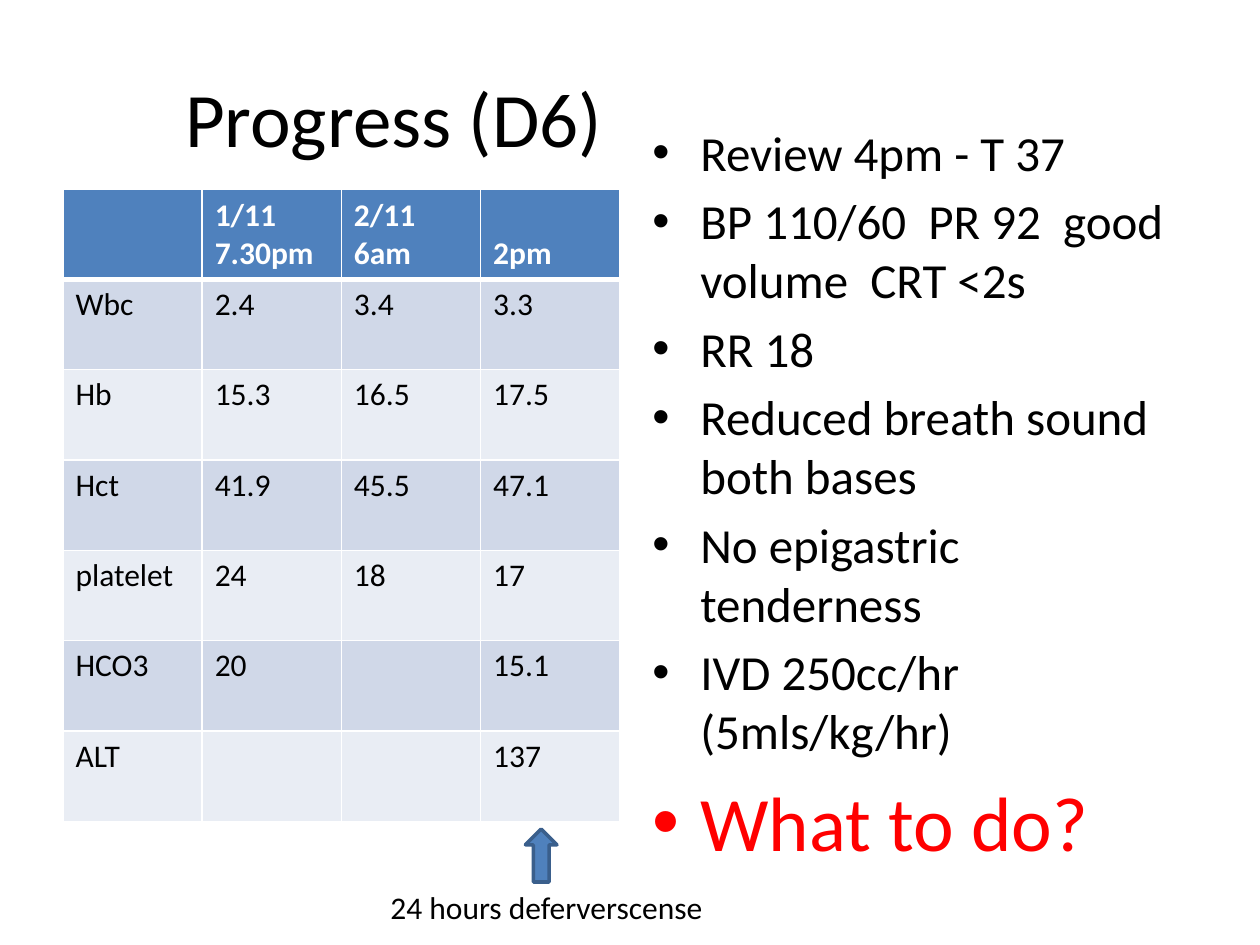
"""Build the day-six progress slide with a blood result table and review notes."""
from lxml.etree import SubElement
from pptx import Presentation
from pptx.dml.color import RGBColor
from pptx.enum.shapes import MSO_SHAPE as Shape
from pptx.enum.text import MSO_ANCHOR as Anchor, PP_ALIGN as Align
from pptx.oxml.ns import qn
from pptx.util import Inches, Pt

COLORS = {
    "text": "000000", "white": "FFFFFF", "alert": "FF0000",
    "blue": "4F81BD", "outline": "3A5F8C",
    "band_dark": "D0D8E8", "band_light": "E9EDF4",
}
FONT = "Calibri"
TITLE = "Progress (D6)"
CAPTION = "24 hours deferverscense"
RESULTS = [
    ("", "1/11\n7.30pm", "2/11 6am", "2pm"),
    ("Wbc", "2.4", "3.4", "3.3"),
    ("Hb", "15.3", "16.5", "17.5"),
    ("Hct", "41.9", "45.5", "47.1"),
    ("platelet", "24", "18", "17"),
    ("HCO3", "20", "", "15.1"),
    ("ALT", "", "", "137"),
]
REVIEW = [
    ("Review 4pm - T 37", 28, "text"),
    ("BP 110/60  PR 92  good volume  CRT <2s", 28, "text"),
    ("RR 18", 28, "text"),
    ("Reduced breath sound both bases", 28, "text"),
    ("No epigastric tenderness", 28, "text"),
    ("IVD 250cc/hr (5mls/kg/hr)", 28, "text"),
    ("What to do?", 44, "alert"),
]
TABLE_AREA = (0.5, 1.5, 4.42, 5.02)


def rgb(name):
    return RGBColor.from_string(COLORS[name])


def add_span(para, text, size, color="text", bold=False):
    span = para.add_run()
    span.text = text
    font = span.font
    font.name, font.size, font.bold = FONT, Pt(size), bold
    font.color.rgb = rgb(color)


def add_box(slide, area):
    frame = slide.shapes.add_textbox(*map(Inches, area)).text_frame
    frame.word_wrap = True
    return frame


def next_para(frame, index):
    return frame.add_paragraph() if index else frame.paragraphs[0]


def add_bullet(para):
    props = para._p.get_or_add_pPr()
    props.set("marL", str(Inches(0.38)))
    props.set("indent", str(-Inches(0.38)))
    SubElement(props, qn("a:buFont"), typeface="Arial")
    SubElement(props, qn("a:buChar"), char="•")


def set_borders(cell, bottom):
    props = cell._tc.get_or_add_tcPr()
    sides = (("lnL", 1), ("lnR", 1), ("lnT", 1), ("lnB", bottom))
    for position, (side, width) in enumerate(sides):
        line = SubElement(props, qn(f"a:{side}"), w=str(Pt(width)))
        fill = SubElement(line, qn("a:solidFill"))
        SubElement(fill, qn("a:srgbClr"), val=COLORS["white"])
        props.insert(position, line)


def fill_cell(cell, text, row):
    header = row == 0
    band = "blue" if header else "band_dark" if row % 2 else "band_light"
    cell.fill.solid()
    cell.fill.fore_color.rgb = rgb(band)
    cell.vertical_anchor = Anchor.BOTTOM if header else Anchor.TOP
    set_borders(cell, 3 if header else 1)
    for index, line in enumerate(text.split("\n")):
        para = next_para(cell.text_frame, index)
        para.font.size = Pt(18)
        if line:
            add_span(para, line, 18, "white" if header else "text", header)


def add_results(slide):
    rows, columns = len(RESULTS), len(RESULTS[0])
    table = slide.shapes.add_table(rows, columns, *map(Inches, TABLE_AREA)).table
    for column in table.columns:
        column.width = Inches(TABLE_AREA[2] / columns)
    for row, values in enumerate(RESULTS):
        table.rows[row].height = Inches(TABLE_AREA[3] / rows)
        for column, text in enumerate(values):
            fill_cell(table.cell(row, column), text, row)


def add_review(slide):
    frame = add_box(slide, (5.08, 0.92, 4.42, 5.78))
    for index, (text, size, color) in enumerate(REVIEW):
        para = next_para(frame, index)
        if index:
            para.space_before = Pt(size * 0.2)
        add_bullet(para)
        add_span(para, text, size, color)


def add_arrow(slide):
    arrow = slide.shapes.add_shape(
        Shape.UP_ARROW, *map(Inches, (4.17, 6.58, 0.25, 0.42)))
    arrow.shadow.inherit = False
    arrow.fill.solid()
    arrow.fill.fore_color.rgb = rgb("blue")
    arrow.line.color.rgb = rgb("outline")
    arrow.line.width = Pt(2)


def main():
    deck = Presentation()
    deck.slide_width, deck.slide_height = Inches(10), Inches(7.5)
    slide = deck.slides.add_slide(deck.slide_layouts[6])
    title = add_box(slide, (0.5, 0.3, 5.25, 1.25))
    title.vertical_anchor = Anchor.MIDDLE
    title.paragraphs[0].alignment = Align.CENTER
    add_span(title.paragraphs[0], TITLE, 44)
    add_results(slide)
    add_review(slide)
    caption = add_box(slide, (3, 7, 3.75, 0.4))
    add_span(caption.paragraphs[0], CAPTION, 18)
    add_arrow(slide)
    deck.save("out.pptx")


if __name__ == "__main__":
    main()
